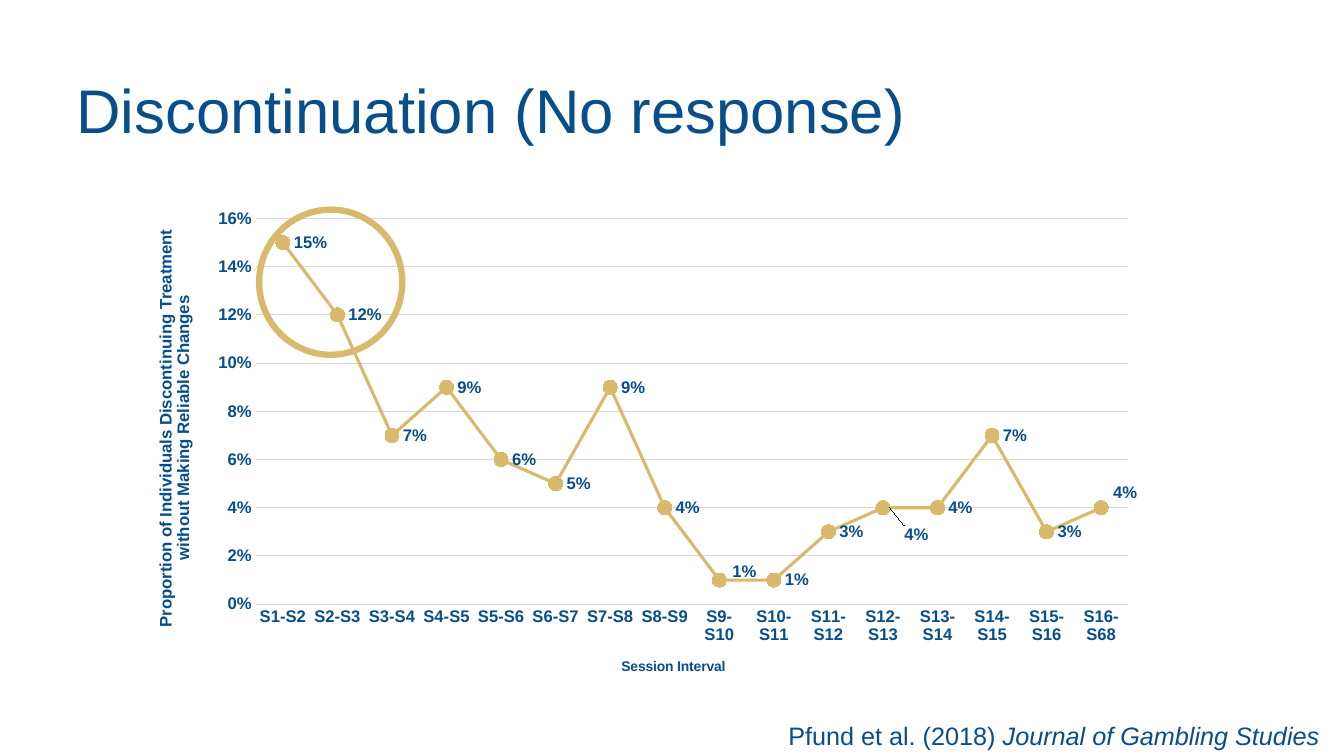
from dataclasses import dataclass

from lxml.etree import SubElement as Sub
from pptx import Presentation
from pptx.chart.data import CategoryChartData as Data
from pptx.dml.color import RGBColor as Color
from pptx.enum.chart import XL_CHART_TYPE as Kind
from pptx.enum.chart import XL_LABEL_POSITION as Spot
from pptx.enum.chart import XL_MARKER_STYLE as Mark
from pptx.enum.chart import XL_TICK_MARK as Tick
from pptx.enum.shapes import MSO_SHAPE as Shape
from pptx.enum.text import MSO_ANCHOR as Anchor
from pptx.oxml import parse_xml
from pptx.oxml.ns import nsdecls, qn
from pptx.util import Inches, Pt


@dataclass(frozen=True)
class Theme:
    face: str = "Arial"
    blue: Color = Color.from_string("084E8A")
    gold: Color = Color.from_string("D9BA6D")
    gray: Color = Color.from_string("D9D9D9")
    head: Pt = Pt(44)
    cite: Pt = Pt(18)
    axis: Pt = Pt(12)
    small: Pt = Pt(10)


def apply(item, form):
    for key, value in form.items():
        setattr(item, key, value)


def layout(**parts):
    root = parse_xml(f"<c:layout {nsdecls('c')}/>")
    frame = Sub(root, qn("c:manualLayout"))
    for key, value in parts.items():
        Sub(frame, qn(f"c:{key}")).set("val", str(value))
    return root


class Page:
    def __init__(self, slide, theme):
        self.slide = slide
        self.theme = theme

    def font(self, font, size, **form):
        apply(font, {"name": self.theme.face, "size": size, **form})
        font.color.rgb = self.theme.blue

    def line(self, line, color, width):
        line.color.rgb = color
        line.width = Pt(width)

    def text(self, box, runs, size, form, space=1.0):
        frame = self.slide.shapes.add_textbox(*map(Inches, box)).text_frame
        apply(frame, {"word_wrap": True, **form})
        para = frame.paragraphs[0]
        para.line_spacing = space
        for words, style in runs:
            run = para.add_run()
            run.text = words
            self.font(run.font, size, **style)

    def ring(self, box):
        ring = self.slide.shapes.add_shape(Shape.OVAL, *map(Inches, box))
        ring.shadow.inherit = False
        ring.fill.background()
        self.line(ring.line, self.theme.gold, 4.5)

    def axis(self, axis, words, size, left, top):
        apply(axis, {"major_tick_mark": Tick.NONE, "minor_tick_mark": Tick.NONE})
        self.font(axis.tick_labels.font, self.theme.axis, bold=True)
        title = axis.axis_title
        run = title.text_frame.paragraphs[0].add_run()
        run.text = words
        self.font(run.font, size, bold=True)
        title._element.find(qn("c:tx")).addnext(
            layout(xMode="edge", yMode="edge", x=left, y=top))
        return title.text_frame

    def label(self, series, index, right, down):
        label = series.points[index].data_label
        self.font(label.font, self.theme.axis, bold=True)
        label.position = Spot.RIGHT
        node = series._element.xpath(f"c:dLbls/c:dLbl[c:idx/@val='{index}']")[0]
        place = layout(x=right, y=down)
        node.find(qn("c:idx")).addnext(place)
        place.addnext(parse_xml(
            f'<c:numFmt {nsdecls("c")} formatCode="0%" sourceLinked="0"/>'))

    def chart(self, box, names, rates, shifts):
        data = Data(number_format="0%")
        data.categories = names
        data.add_series("Series 1", rates)
        chart = self.slide.shapes.add_chart(
            Kind.LINE_MARKERS, *map(Inches, box), data).chart
        apply(chart, {"has_legend": False, "has_title": False})
        self.font(chart.font, self.theme.small)
        area = chart._chartSpace.chart.plotArea
        for old in area.findall(qn("c:layout")):
            area.remove(old)
        area.insert(0, layout(layoutTarget="inner", xMode="edge", yMode="edge",
                              x=0.167, y=0.062, w=0.833, h=0.746))

        base, side = chart.category_axis, chart.value_axis
        self.axis(base, "Session Interval", self.theme.small, 0.477, 0.945)
        self.line(base.format.line, self.theme.gray, 0.75)
        frame = self.axis(
            side, "Proportion of Individuals Discontinuing Treatment "
            "without Making Reliable Changes", self.theme.axis, 0.073, 0.05)
        for key, value in {"rot": "-5400000", "vert": "horz"}.items():
            frame._txBody.bodyPr.set(key, value)
        apply(side, {"minimum_scale": 0, "maximum_scale": 0.16, "major_unit": 0.02})
        apply(side.tick_labels, {"number_format": "0%",
                                 "number_format_is_linked": False})
        side.format.line.fill.background()
        self.line(side.major_gridlines.format.line, self.theme.gray, 0.75)

        plot = chart.plots[0]
        plot.vary_by_categories = False
        series = plot.series[0]
        series.smooth = False
        self.line(series.format.line, self.theme.gold, 2.25)
        mark = series.marker
        apply(mark, {"style": Mark.CIRCLE, "size": 10})
        mark.format.fill.solid()
        mark.format.fill.fore_color.rgb = self.theme.gold
        self.line(mark.format.line, self.theme.gold, 0.75)
        labels = series.data_labels
        apply(labels, {"show_value": True, "number_format": "0%",
                       "number_format_is_linked": False, "position": Spot.RIGHT})
        self.font(labels.font, self.theme.axis, bold=True)
        for index, shift in shifts.items():
            self.label(series, index, *shift)


def main():
    deck = Presentation()
    apply(deck, {"slide_width": Inches(13.33), "slide_height": Inches(7.5)})
    theme = Theme()
    page = Page(deck.slides.add_slide(deck.slide_layouts[6]), theme)
    page.text((0.66, 0.4, 11.32, 1.45), [("Discontinuation (No response)", {})],
              theme.head, {"vertical_anchor": Anchor.MIDDLE}, 0.9)
    names = [f"S{n}-S{n + 1}" for n in range(1, 16)] + ["S16-S68"]
    rates = [0.15, 0.12, 0.07, 0.09, 0.06, 0.05, 0.09, 0.04,
             0.01, 0.01, 0.03, 0.04, 0.04, 0.07, 0.03, 0.04]
    shifts = {8: (0.002, -0.016), 11: (0.01, 0.052), 15: (0.001, -0.03)}
    page.chart((0.8, 1.85, 10.48, 5.13), names, rates, shifts)
    page.ring((2.57, 2.08, 1.42, 1.44))
    page.text((7.72, 7.1, 6.39, 0.4),
              [("Pfund et al. (2018) ", {}),
               ("Journal of Gambling Studies", {"italic": True})],
              theme.cite, {})
    deck.save("out.pptx")


if __name__ == "__main__":
    main()
